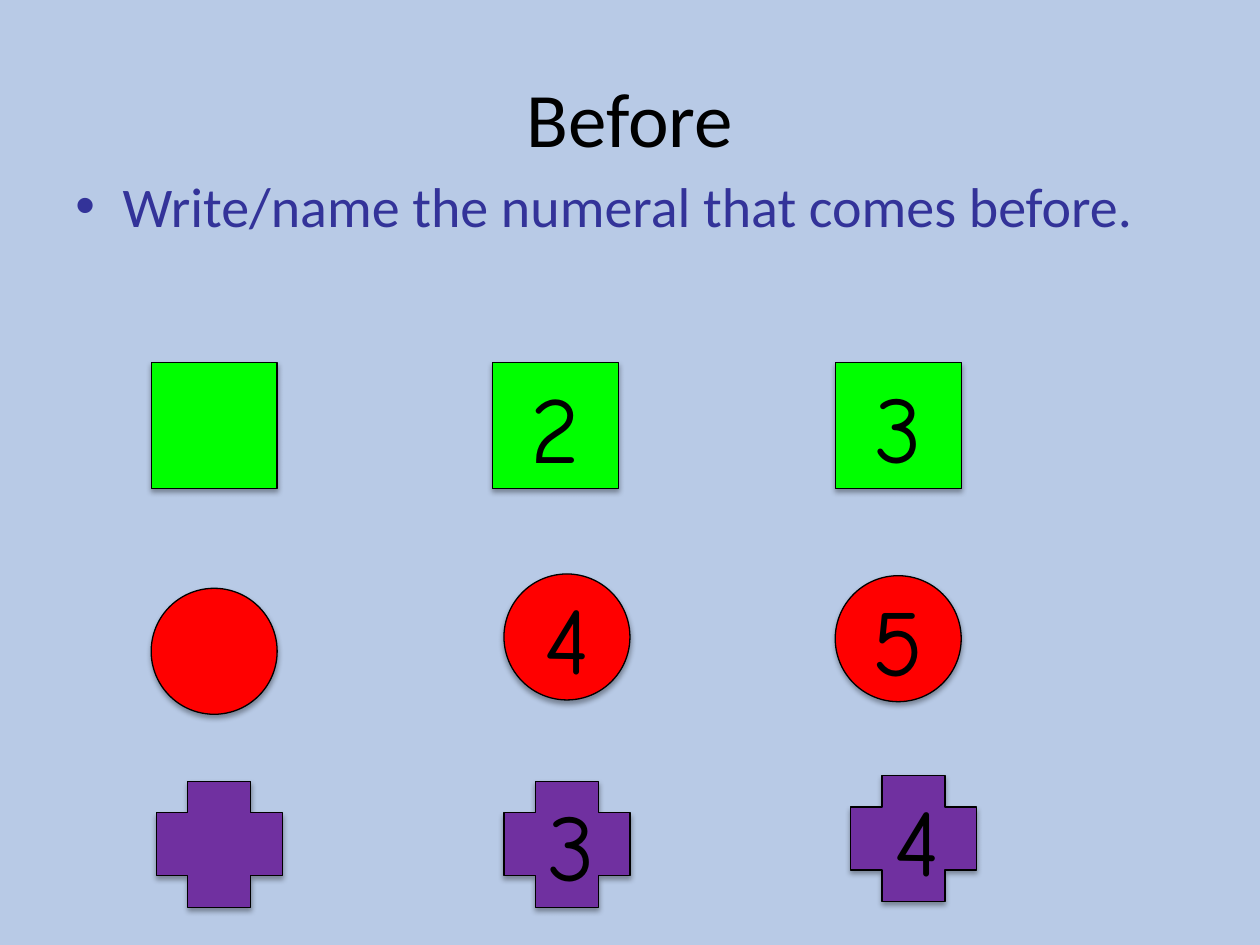
import pptx
import pptx.util
import pptx.oxml
import pptx.oxml.ns
import pptx.dml.color
import pptx.enum.shapes
import pptx.enum.text

Pt = pptx.util.Pt
SHAPE = pptx.enum.shapes.MSO_SHAPE
ALIGN = pptx.enum.text.PP_ALIGN
ANCHOR = pptx.enum.text.MSO_ANCHOR
NAMESPACE = pptx.oxml.ns.nsdecls("a")

COLORS = {
    "background": "B8CAE6",
    "black": "000000",
    "instruction": "333399",
    "green": "00FF00",
    "red": "FF0000",
    "purple": "7030A0",
}
FONTS = {
    "title": {"name": "Calibri", "size": Pt(44)},
    "instruction": {"name": "Calibri", "size": Pt(32)},
    "numeral": {"name": "Comic Neue", "size": Pt(54)},
}
SHADOW = (
    f'<a:effectLst {NAMESPACE}><a:outerShdw blurRad="{Pt(3.1)}" dist="{Pt(1.8)}" '
    'dir="5400000" rotWithShape="0"><a:srgbClr val="000000">'
    '<a:alpha val="35000"/></a:srgbClr></a:outerShdw></a:effectLst>'
)


def rgb(color):
    return pptx.dml.color.RGBColor.from_string(COLORS[color])


def write(shape, text, style, color, align, anchor):
    frame = shape.text_frame
    frame.word_wrap = True
    frame.vertical_anchor = anchor
    paragraph = frame.paragraphs[0]
    paragraph.alignment = align
    run = paragraph.add_run()
    run.text = text
    for attribute, value in FONTS[style].items():
        setattr(run.font, attribute, value)
    run.font.color.rgb = rgb(color)
    return paragraph


presentation = pptx.Presentation()
presentation.slide_width = Pt(720)
presentation.slide_height = Pt(540)
slide = presentation.slides.add_slide(presentation.slide_layouts[6])
slide.background.fill.solid()
slide.background.fill.fore_color.rgb = rgb("background")

# Title
title = slide.shapes.add_textbox(Pt(36), Pt(21.6), Pt(648), Pt(90))
write(title, "Before", "title", "black", ALIGN.CENTER, ANCHOR.MIDDLE)

# Bulleted instruction
instruction = slide.shapes.add_textbox(Pt(36), Pt(94.5), Pt(648), Pt(445.5))
paragraph = write(instruction, "Write/name the numeral that comes before.",
                  "instruction", "instruction", ALIGN.LEFT, ANCHOR.TOP)
properties = paragraph._p.get_or_add_pPr()
properties.set("marL", str(Pt(27)))
properties.set("indent", str(Pt(-27)))
for xml in (
    f'<a:spcBef {NAMESPACE}><a:spcPct val="20000"/></a:spcBef>',
    f'<a:buFont {NAMESPACE} typeface="Arial"/>',
    f'<a:buChar {NAMESPACE} char="•"/>',
):
    properties.append(pptx.oxml.parse_xml(xml))

# Rows of shapes: the first is left empty for the answer
SIDE = Pt(72)
ROWS = [
    (SHAPE.RECTANGLE, "green",
     [(86.4, 207, ""), (281.3, 207, "2"), (477.3, 207, "3")]),
    (SHAPE.OVAL, "red",
     [(86.4, 336.2, ""), (288, 328, "4"), (477.3, 329, "5")]),
    (SHAPE.CROSS, "purple",
     [(89.3, 446.4, ""), (288, 446.4, "3"), (486, 443.2, "4")]),
]
for kind, color, cards in ROWS:
    for left, top, numeral in cards:
        shape = slide.shapes.add_shape(kind, Pt(left), Pt(top), SIDE, SIDE)
        shape.fill.solid()
        shape.fill.fore_color.rgb = rgb(color)
        shape.line.color.rgb = rgb("black")
        shape.line.width = Pt(0.75)
        shape._element.spPr.append(pptx.oxml.parse_xml(SHADOW))
        if numeral:
            write(shape, numeral, "numeral", "black", ALIGN.CENTER, ANCHOR.MIDDLE)

presentation.save("out.pptx")
